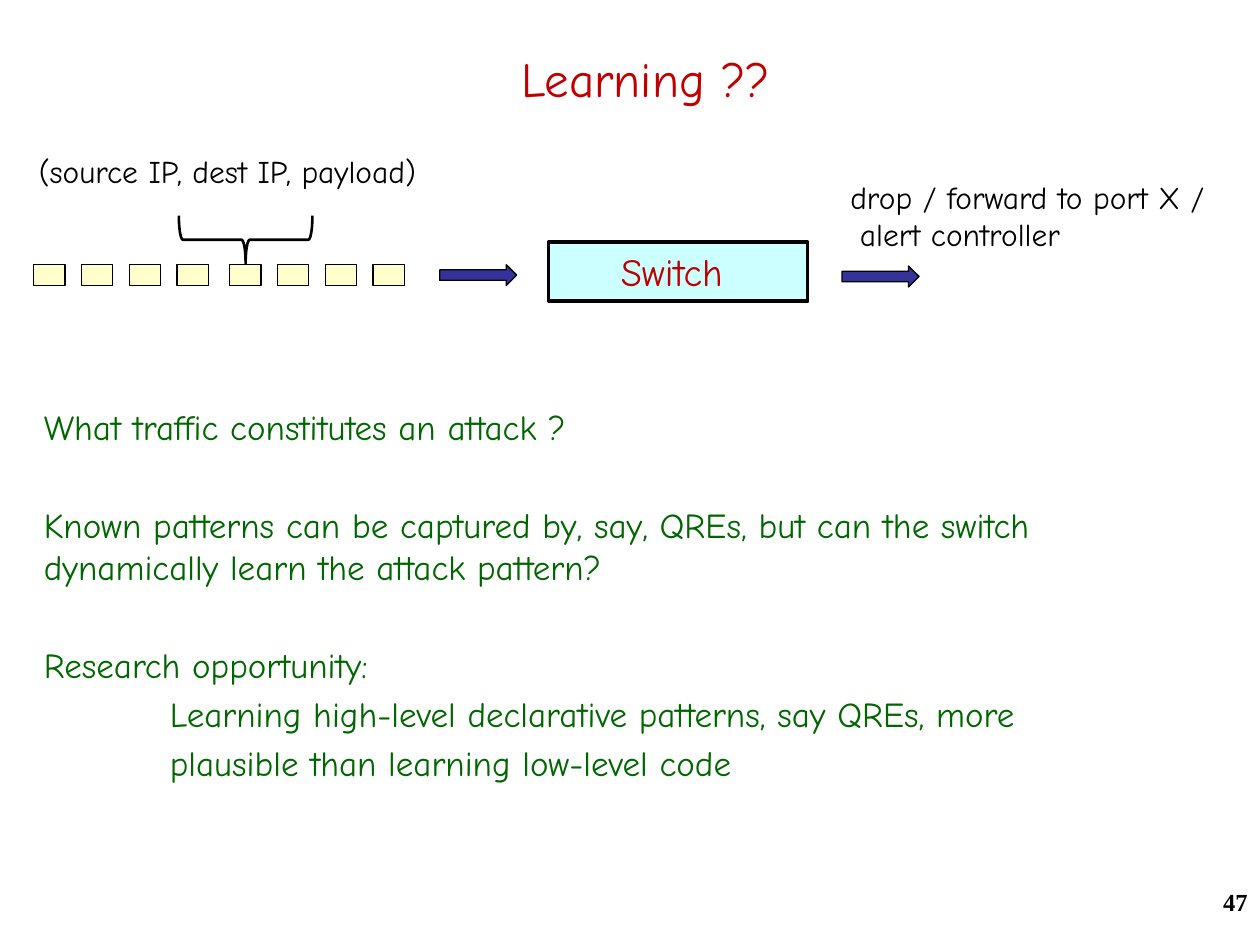
import pptx
import pptx.util
import pptx.dml.color
import pptx.enum.shapes
import pptx.enum.text

Pt = pptx.util.Pt
RGBColor = pptx.dml.color.RGBColor
Kind = pptx.enum.shapes.MSO_SHAPE
Align = pptx.enum.text.PP_ALIGN
Anchor = pptx.enum.text.MSO_ANCHOR

RED = RGBColor(0xC0, 0x00, 0x00)
GREEN = RGBColor(0x00, 0x66, 0x00)
BLACK = RGBColor(0x00, 0x00, 0x00)
BLUE = RGBColor(0x33, 0x33, 0x99)
CYAN = RGBColor(0xCC, 0xFF, 0xFF)
CREAM = RGBColor(0xFF, 0xFF, 0xCC)


class SlideBuilder:
    """Draw styled shapes and text on the current slide."""

    font = "Comic Neue"

    def __init__(self, slide):
        self.slide = slide

    def label(self, shape, lines, size, color, align=Align.LEFT, anchor=Anchor.TOP, font=None, bold=False):
        frame = shape.text_frame
        frame.word_wrap = True
        frame.vertical_anchor = anchor
        frame.text = "\n".join(lines)
        for paragraph in frame.paragraphs:
            paragraph.alignment = align
            for run in paragraph.runs:
                run.font.name = font or self.font
                run.font.size = Pt(size)
                run.font.bold = bold
                run.font.color.rgb = color
        return frame.paragraphs

    def text(self, left, top, width, height, lines, size, color, **style):
        box = self.slide.shapes.add_textbox(Pt(left), Pt(top), Pt(width), Pt(height))
        return self.label(box, lines, size, color, **style)

    def shape(self, kind, left, top, width, height, fill=None, line_width=0.75):
        shape = self.slide.shapes.add_shape(kind, Pt(left), Pt(top), Pt(width), Pt(height))
        shape.shadow.inherit = False
        if fill is None:
            shape.fill.background()
        else:
            shape.fill.solid()
            shape.fill.fore_color.rgb = fill
        shape.line.color.rgb = BLACK
        shape.line.width = Pt(line_width)
        return shape

    def indent(self, paragraph, margin):
        properties = paragraph._p.get_or_add_pPr()
        properties.set("marL", str(Pt(margin)))
        properties.set("indent", "0")


def main():
    presentation = pptx.Presentation()
    presentation.slide_width = Pt(720)
    presentation.slide_height = Pt(540)
    builder = SlideBuilder(presentation.slides.add_slide(presentation.slide_layouts[6]))

    builder.text(18, 23.8, 702, 41.8, ["Learning ??"], 28, RED, align=Align.CENTER, anchor=Anchor.MIDDLE)
    switch = builder.shape(Kind.RECTANGLE, 313.5, 138.2, 148, 34, CYAN, 2)
    builder.label(switch, ["Switch "], 22, RED, align=Align.CENTER, anchor=Anchor.MIDDLE)
    builder.text(570, 503.3, 150, 36, ["47"], 14, BLACK, align=Align.RIGHT, font="Times New Roman", bold=True)

    for group_left in (19.2, 131.2):
        for index in range(4):
            builder.shape(Kind.RECTANGLE, group_left + 27.3 * index, 151.2, 18, 12, CREAM)
    for left, top in ((251.3, 151.2), (481.2, 152)):
        builder.shape(Kind.RIGHT_ARROW, left, top, 44, 12, BLUE)

    body = builder.text(18, 228.2, 654, 264, [
        "What traffic constitutes an attack ?",
        "Known patterns can be captured by, say, QREs, but can the switch dynamically learn the attack pattern?",
        "Research opportunity:",
        "Learning high-level declarative patterns, say QREs, more",
        "plausible than learning low-level code",
    ], 20, GREEN)
    for paragraph, gap in zip(body, (0, 32, 32, 4, 4)):
        paragraph.space_before = Pt(gap)
    for paragraph in body[3:]:
        builder.indent(paragraph, 72)

    builder.text(15.1, 83.5, 255.6, 28.8, ["(source IP, dest IP, payload)"], 18, BLACK)
    actions = builder.text(478.8, 97.9, 241.2, 51, ["drop / forward to port X /", "alert controller"], 18, BLACK)
    builder.indent(actions[1], 5.5)

    brace = builder.shape(Kind.LEFT_BRACE, 126.7, 98.8, 27.4, 76.3, line_width=1.5)
    brace.rotation = 270

    presentation.save("out.pptx")


if __name__ == "__main__":
    main()
